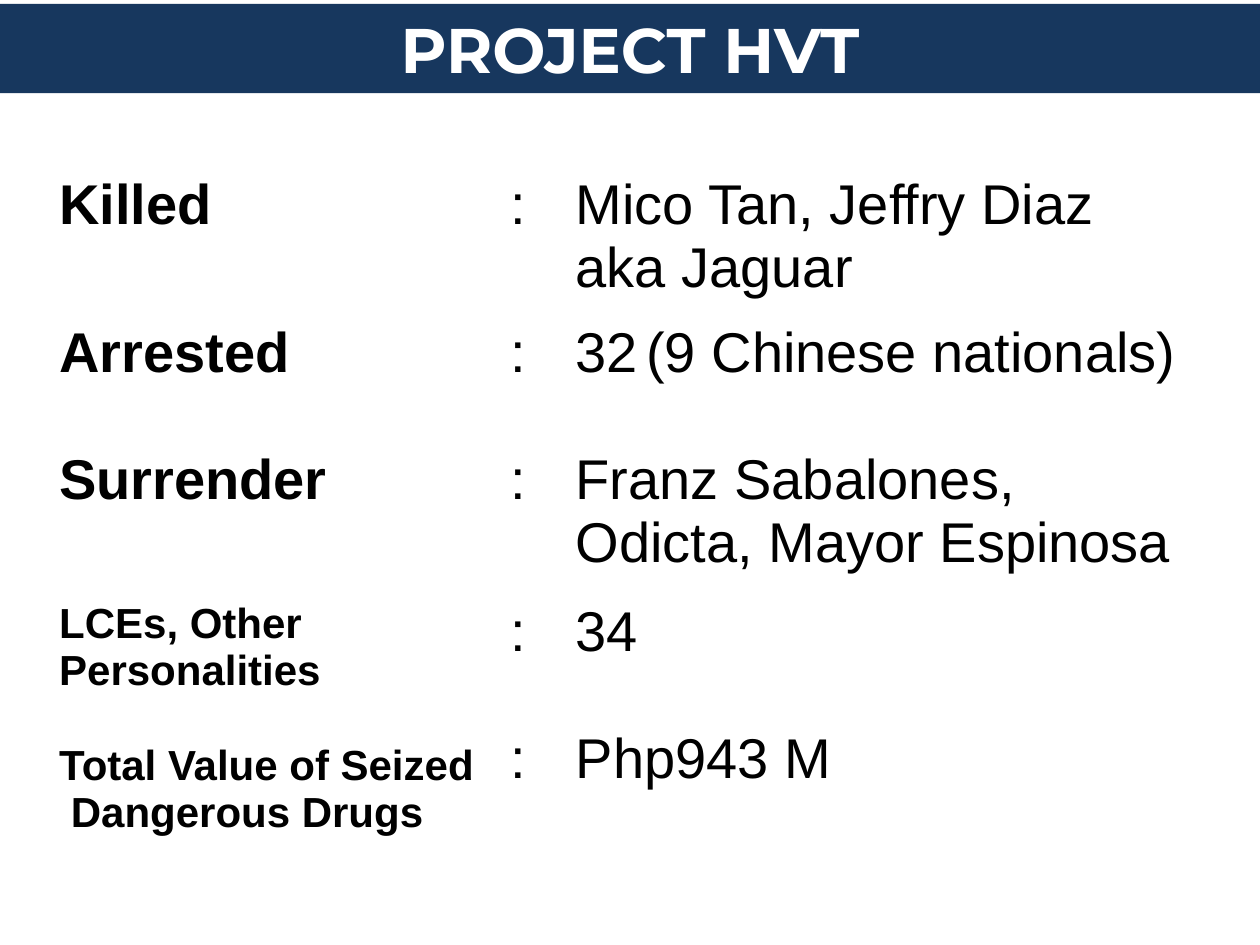
"""Build the Project HVT results slide."""
from lxml import etree
from pptx import Presentation
from pptx.dml.color import RGBColor
from pptx.enum.text import MSO_ANCHOR, MSO_AUTO_SIZE, PP_ALIGN
from pptx.oxml.ns import qn
from pptx.util import Inches, Pt

MIDDLE = MSO_ANCHOR.MIDDLE
FIXED = MSO_AUTO_SIZE.NONE
CENTER = PP_ALIGN.CENTER

TITLE = "PROJECT HVT"
ROWS = [
    [("Killed", "Mico Tan, Jeffry Diaz aka Jaguar")],
    [("Arrested", "(9 Chinese nationals)"),
     ("Surrender", "Franz Sabalones, Odicta, Mayor Espinosa")],
    [("LCEs, Other Personalities", "34"),
     ("Total Value of Seized\v Dangerous Drugs", "Php943 M")],
]
COUNTS = {"(9 Chinese nationals)": 32}
WIDTHS = [3.58, 0.52, 5.15]
HEIGHTS = [1.17, 2.22, 2.85]
THEME = {
    "navy": RGBColor(0x17, 0x37, 0x5E),
    "white": RGBColor(255, 255, 255),
    "black": RGBColor(0, 0, 0),
    "head": "Montserrat",
    "body": "Arial",
    "title": 36,
    "text": 32,
    "small": 24,
    "line": 1.15,
}


def style(para, face, size, color, bold):
    for run in para.runs:
        font = run.font
        font.name, font.size, font.bold = face, Pt(size), bold
        font.color.rgb = color


def number(para, start):
    props = para._p.get_or_add_pPr()
    props.set("marL", str(Inches(0.56)))
    props.set("indent", str(-Inches(0.56)))
    etree.SubElement(props, qn("a:buFont"), typeface="+mj-lt")
    etree.SubElement(props, qn("a:buAutoNum"), type="arabicPlain", startAt=str(start))


def fill_cell(cell, lines, size, bold):
    cell.fill.solid()
    cell.fill.fore_color.rgb = THEME["white"]
    frame = cell.text_frame
    for i, line in enumerate(lines):
        para = frame.add_paragraph() if i else frame.paragraphs[0]
        para.text = line
        if i:
            para.space_before = Pt(round(size * THEME["line"], 1))
        if line in COUNTS:
            number(para, COUNTS[line])
        style(para, THEME["body"], size, THEME["black"], bold)


def add_title(slide):
    bar = slide.shapes.title
    bar.left, bar.top = Inches(0), Inches(0.03)
    bar.width, bar.height = Inches(10), Inches(0.71)
    bar.fill.solid()
    bar.fill.fore_color.rgb = THEME["navy"]
    frame = bar.text_frame
    frame.text = TITLE
    frame.auto_size = FIXED
    frame.vertical_anchor = MIDDLE
    para = frame.paragraphs[0]
    para.alignment = CENTER
    style(para, THEME["head"], THEME["title"], THEME["white"], True)


def add_facts(slide):
    table = slide.shapes.add_table(
        len(ROWS), len(WIDTHS), Inches(0.37), Inches(1.33),
        Inches(sum(WIDTHS)), Inches(sum(HEIGHTS))).table
    table.first_row = table.horz_banding = False
    for col, width in zip(table.columns, WIDTHS):
        col.width = Inches(width)
    for r, facts in enumerate(ROWS):
        table.rows[r].height = Inches(HEIGHTS[r])
        labels, values = zip(*facts)
        size = THEME["small"] if r == len(ROWS) - 1 else THEME["text"]
        fill_cell(table.cell(r, 0), labels, size, True)
        fill_cell(table.cell(r, 1), [":"] * len(facts), THEME["text"], False)
        fill_cell(table.cell(r, 2), values, THEME["text"], False)


def main():
    deck = Presentation()
    deck.slide_width, deck.slide_height = Inches(10), Inches(7.5)
    slide = deck.slides.add_slide(deck.slide_layouts[5])
    add_title(slide)
    add_facts(slide)
    deck.save("out.pptx")


if __name__ == "__main__":
    main()
